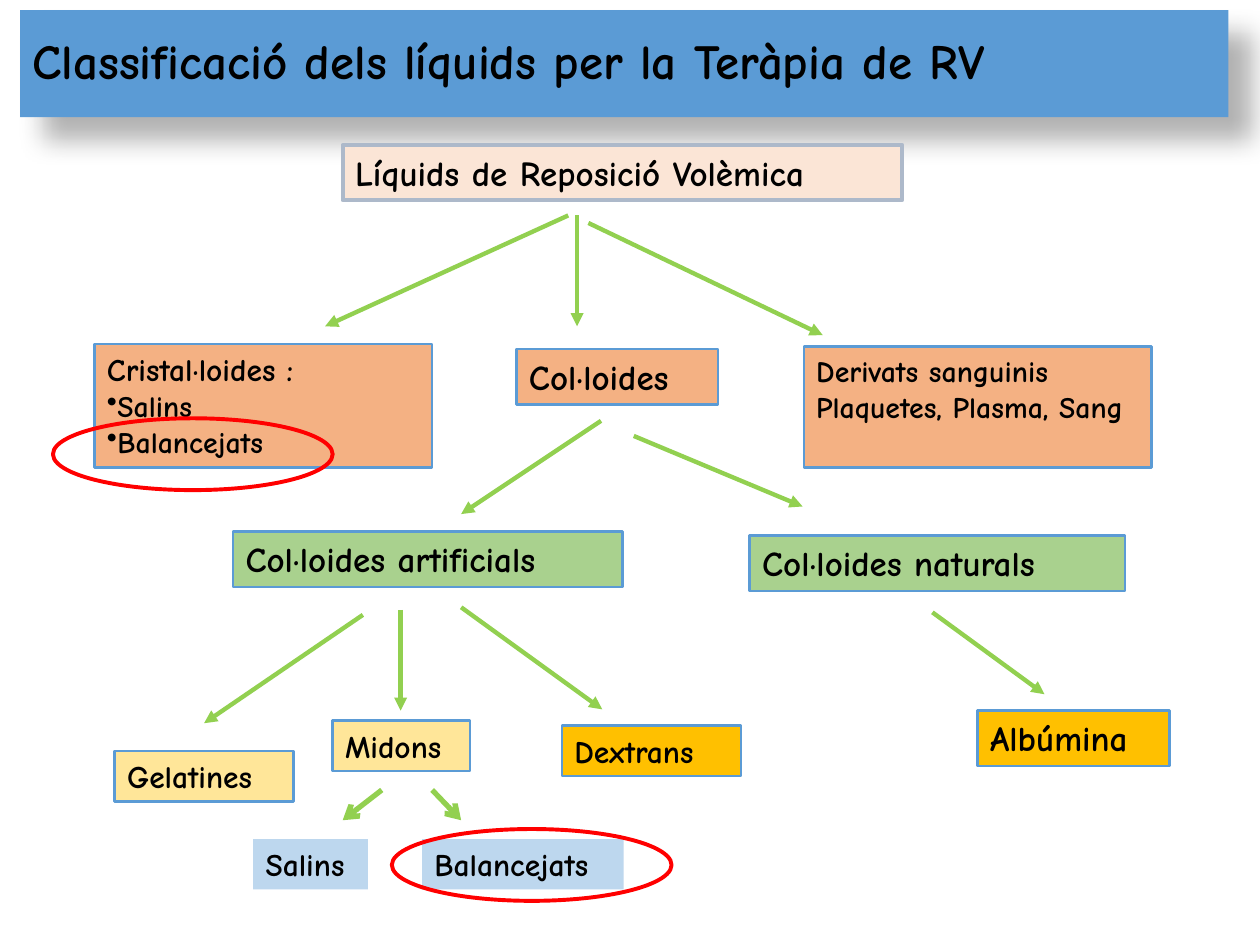
from dataclasses import dataclass

from lxml import etree
from pptx import Presentation
from pptx.dml.color import RGBColor
from pptx.enum.shapes import MSO_CONNECTOR, MSO_SHAPE
from pptx.enum.text import MSO_ANCHOR, PP_ALIGN
from pptx.oxml.ns import qn
from pptx.util import Inches, Pt

RECTANGLE, ELLIPSE = MSO_SHAPE.RECTANGLE, MSO_SHAPE.OVAL
STRAIGHT = MSO_CONNECTOR.STRAIGHT
TOP, MIDDLE = MSO_ANCHOR.TOP, MSO_ANCHOR.MIDDLE
LEFT = PP_ALIGN.LEFT
COLUMNS, ROWS = 100, 75
FONT = "Comic Neue"
BLUE, ORANGE, GREEN = "5B9BD5", "F4B183", "A9D18E"
YELLOW, GOLD, PALE_BLUE = "FFE699", "FFC000", "BDD7EE"
ARROW_GREEN, RED, BLACK = "92D050", "FF0000", "000000"


@dataclass(frozen=True)
class Line:
    text: str
    size: float = 20
    bullet: str = ""


@dataclass(frozen=True)
class Box:
    column: float
    row: float
    columns: float
    rows: float
    lines: tuple[Line, ...] = ()
    fill: str = ""
    border: str = BLUE
    border_width: float = 1.5
    anchor: int = TOP
    shape: int = RECTANGLE
    spacing: float = 1.0


@dataclass(frozen=True)
class Arrow:
    start: tuple[float, float]
    end: tuple[float, float]
    width: float = 2.5
    head: str = "triangle"


TITLE = Box(1.6, 0.8, 95.9, 8.5, (Line("Classificació dels líquids per la Teràpia de RV", 28),),
            BLUE, "", anchor=MIDDLE, spacing=0.9)

BOXES = (
    Box(27.2, 11.5, 44.4, 4.4, (Line("Líquids de Reposició Volèmica"),), "FBE5D6", "ADB9CA", 2.25),
    Box(41, 27.7, 16, 4.4, (Line("Col·loides"),), ORANGE),
    Box(7.5, 27.3, 26.8, 9.8,
        (Line("Cristal·loides :", 18), Line("Salins", 17, "•"), Line("Balancejats", 17, "•")), ORANGE),
    Box(63.8, 27.5, 27.6, 9.6,
        (Line("Derivats sanguinis", 17), Line("Plaquetes, Plasma, Sang", 17)), ORANGE),
    Box(18.5, 42.2, 30.9, 4.4, (Line("Col·loides artificials"),), GREEN),
    Box(59.5, 42.5, 29.8, 4.4, (Line("Col·loides naturals"),), GREEN),
    Box(9.1, 59.6, 14.2, 4, (Line("Gelatines", 18),), YELLOW),
    Box(26.4, 57.2, 10.9, 4, (Line("Midons", 18),), YELLOW),
    Box(44.6, 57.6, 14.2, 4, (Line("Dextrans", 18),), GOLD),
    Box(77.6, 56.4, 15.2, 4.4, (Line("Albúmina"),), GOLD),
    Box(20.1, 66.6, 9.1, 4, (Line("Salins", 18),), PALE_BLUE, ""),
    Box(33.5, 66.6, 16, 4, (Line("Balancejats", 18),), PALE_BLUE, ""),
)

HIGHLIGHTS = tuple(
    Box(column, row, 22.2, 5.7, border=RED, border_width=2.25, shape=ELLIPSE)
    for column, row in ((4.2, 33.2), (31.1, 65.8))
)

ARROWS = (
    Arrow((45.1, 17.1), (25.8, 25.9)),
    Arrow((45.8, 17.1), (45.8, 25.9)),
    Arrow((46.7, 17.7), (65.3, 26.6)),
    Arrow((47.7, 33.4), (36.6, 40.8)),
    Arrow((50.3, 34.6), (63.7, 40.2)),
    Arrow((28.8, 48.8), (16.2, 57.4)),
    Arrow((31.8, 48.4), (31.8, 56.4)),
    Arrow((36.6, 48.2), (47.8, 56.3)),
    Arrow((74, 48.6), (82.9, 55.1)),
    Arrow((30.3, 62.7), (27.2, 65.1), 3, "arrow"),
    Arrow((34.3, 62.7), (36.6, 65.1), 3, "arrow"),
)


def color(value: str) -> RGBColor:
    return RGBColor.from_string(value)


def set_format(target, values: dict) -> None:
    for name, value in values.items():
        setattr(target, name, value)


def write_line(para, line: Line, spacing: float) -> None:
    set_format(para, {"alignment": LEFT, "line_spacing": spacing})
    span = para.add_run()
    span.text = line.text
    set_format(span.font, {"name": FONT, "size": Pt(line.size), "bold": True})
    span.font.color.rgb = color(BLACK)
    if line.bullet:
        properties = para._p.get_or_add_pPr()
        etree.SubElement(properties, qn("a:buChar"), char=line.bullet)


def draw_box(page, box: Box, cell_width: float, cell_height: float):
    shape = page.shapes.add_shape(
        box.shape, round(box.column * cell_width), round(box.row * cell_height),
        round(box.columns * cell_width), round(box.rows * cell_height))
    shape.shadow.inherit = False
    if box.fill:
        shape.fill.solid()
        shape.fill.fore_color.rgb = color(box.fill)
    else:
        shape.fill.background()
    if box.border:
        shape.line.color.rgb = color(box.border)
        shape.line.width = Pt(box.border_width)
    else:
        shape.line.fill.background()
    frame = shape.text_frame
    set_format(frame, {
        "word_wrap": True, "vertical_anchor": box.anchor,
        "margin_left": Inches(0.1), "margin_right": Inches(0.1),
        "margin_top": Inches(0.05), "margin_bottom": Inches(0.05),
    })
    for index, line in enumerate(box.lines):
        para = frame.add_paragraph() if index else frame.paragraphs[0]
        write_line(para, line, box.spacing)
    return shape


def cast_shadow(shape) -> None:
    effects = shape._element.spPr.find(qn("a:effectLst"))
    shadow = etree.SubElement(
        effects, qn("a:outerShdw"), blurRad=str(Pt(15)), dist=str(Pt(18)),
        dir=str(45 * 60000), algn="tl", rotWithShape="0")
    tint = etree.SubElement(shadow, qn("a:srgbClr"), val=BLACK)
    etree.SubElement(tint, qn("a:alpha"), val="30000")


def draw_arrow(page, arrow: Arrow, cell_width: float, cell_height: float) -> None:
    ends = [round(share * cell) for point in (arrow.start, arrow.end)
            for share, cell in zip(point, (cell_width, cell_height))]
    connector = page.shapes.add_connector(STRAIGHT, *ends)
    connector.line.color.rgb = color(ARROW_GREEN)
    connector.line.width = Pt(arrow.width)
    etree.SubElement(connector.line._get_or_add_ln(), qn("a:tailEnd"), type=arrow.head)
    etree.SubElement(connector._element.spPr, qn("a:effectLst"))


def main() -> None:
    deck = Presentation()
    set_format(deck, {"slide_width": Inches(10), "slide_height": Inches(7.5)})
    page = deck.slides.add_slide(deck.slide_layouts[6])
    cell = deck.slide_width / COLUMNS, deck.slide_height / ROWS
    cast_shadow(draw_box(page, TITLE, *cell))
    for box in BOXES:
        draw_box(page, box, *cell)
    for arrow in ARROWS:
        draw_arrow(page, arrow, *cell)
    for highlight in HIGHLIGHTS:
        draw_box(page, highlight, *cell)
    deck.save("out.pptx")


if __name__ == "__main__":
    main()
